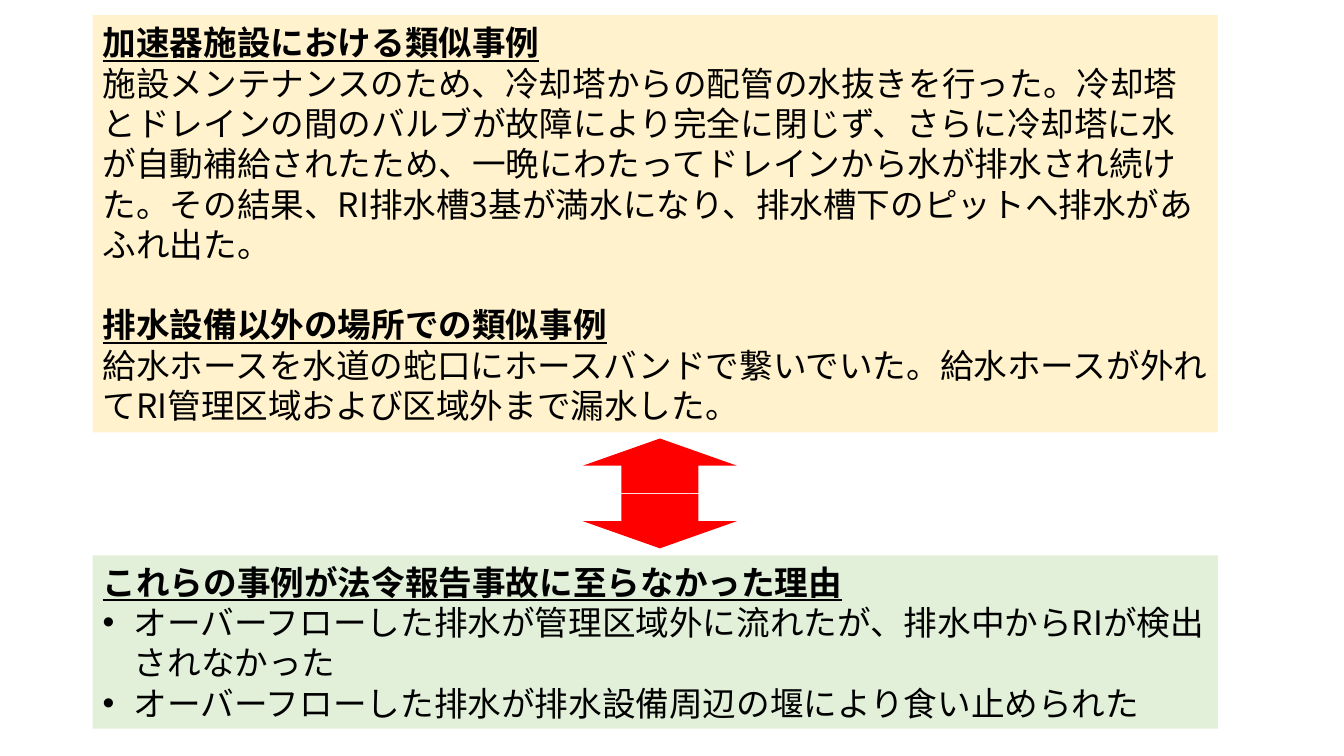
from lxml import etree
from pptx import Presentation
from pptx.dml.color import RGBColor
from pptx.enum.shapes import MSO_SHAPE
from pptx.enum.text import MSO_ANCHOR, PP_ALIGN
from pptx.oxml.ns import qn
from pptx.util import Inches, Pt

RECTANGLE = MSO_SHAPE.RECTANGLE
DOWN_ARROW = MSO_SHAPE.DOWN_ARROW
MIDDLE = MSO_ANCHOR.MIDDLE
LEFT = PP_ALIGN.LEFT

FONT = "Noto Sans CJK JP"
LINE_PITCH = Pt(28.8)
COLORS = {"cases": "FFF2CC", "reasons": "E2F0D9", "arrow": "FF0000", "text": "000000"}


def add_block(page, kind, left, top, width, height, color):
    block = page.shapes.add_shape(
        kind, Inches(left), Inches(top), Inches(width), Inches(height))
    block.shadow.inherit = False
    block.fill.solid()
    block.fill.fore_color.rgb = RGBColor.from_string(COLORS[color])
    block.line.fill.background()
    return block


def add_panel(page, top, height, color):
    panel = add_block(page, RECTANGLE, 0.92, top, 11.16, height, color)
    frame = panel.text_frame
    frame.word_wrap = True
    frame.vertical_anchor = MIDDLE
    return frame


def add_text(frame, text, heading=False, bullet=False, space_before=0):
    # The first text fills the paragraph that the frame already has
    first = frame.paragraphs[0]
    para = frame.add_paragraph() if first.runs else first
    para.alignment = LEFT
    para.line_spacing = LINE_PITCH
    para.space_before = space_before
    if bullet:
        properties = para._p.get_or_add_pPr()
        indent = Inches(0.31)
        properties.set("marL", str(indent))
        properties.set("indent", str(-indent))
        etree.SubElement(properties, qn("a:buFont"), typeface="Arial")
        etree.SubElement(properties, qn("a:buChar"), char="•")
    span = para.add_run()
    span.text = text
    font = span.font
    font.size = Pt(24)
    font.bold = heading
    font.underline = heading
    font.color.rgb = RGBColor.from_string(COLORS["text"])
    font.name = FONT
    etree.SubElement(span._r.get_or_add_rPr(), qn("a:ea"), typeface=FONT)


def main():
    deck = Presentation()
    deck.slide_width, deck.slide_height = Inches(13.33), Inches(7.5)
    page = deck.slides.add_slide(deck.slide_layouts[6])

    # Similar cases
    cases = add_panel(page, 0.15, 4.14, "cases")
    add_text(cases, "加速器施設における類似事例", heading=True)
    add_text(cases, "施設メンテナンスのため、冷却塔からの配管の水抜きを行った。"
                    "冷却塔とドレインの間のバルブが故障により完全に閉じず、"
                    "さらに冷却塔に水が自動補給されたため、"
                    "一晩にわたってドレインから水が排水され続けた。"
                    "その結果、RI排水槽3基が満水になり、"
                    "排水槽下のピットへ排水があふれ出た。")
    add_text(cases, "排水設備以外の場所での類似事例", heading=True,
             space_before=LINE_PITCH)
    add_text(cases, "給⽔ホースを⽔道の蛇⼝にホースバンドで繋いでいた。"
                    "給⽔ホースが外れてRI管理区域および区域外まで漏⽔した。")

    # Reasons they were not reportable accidents
    reasons = add_panel(page, 5.51, 1.72, "reasons")
    add_text(reasons, "これらの事例が法令報告事故に至らなかった理由", heading=True)
    for reason in (
        "オーバーフローした排水が管理区域外に流れたが、排水中からRIが検出されなかった",
        "オーバーフローした排水が排水設備周辺の堰により食い止められた",
    ):
        add_text(reasons, reason, bullet=True)

    # Two-way arrow between the panels
    for top, rotation in ((4.9, 0), (4.35, 180)):
        arrow = add_block(page, DOWN_ARROW, 5.78, top, 1.53, 0.54, "arrow")
        arrow.rotation = rotation

    deck.save("out.pptx")


if __name__ == "__main__":
    main()
